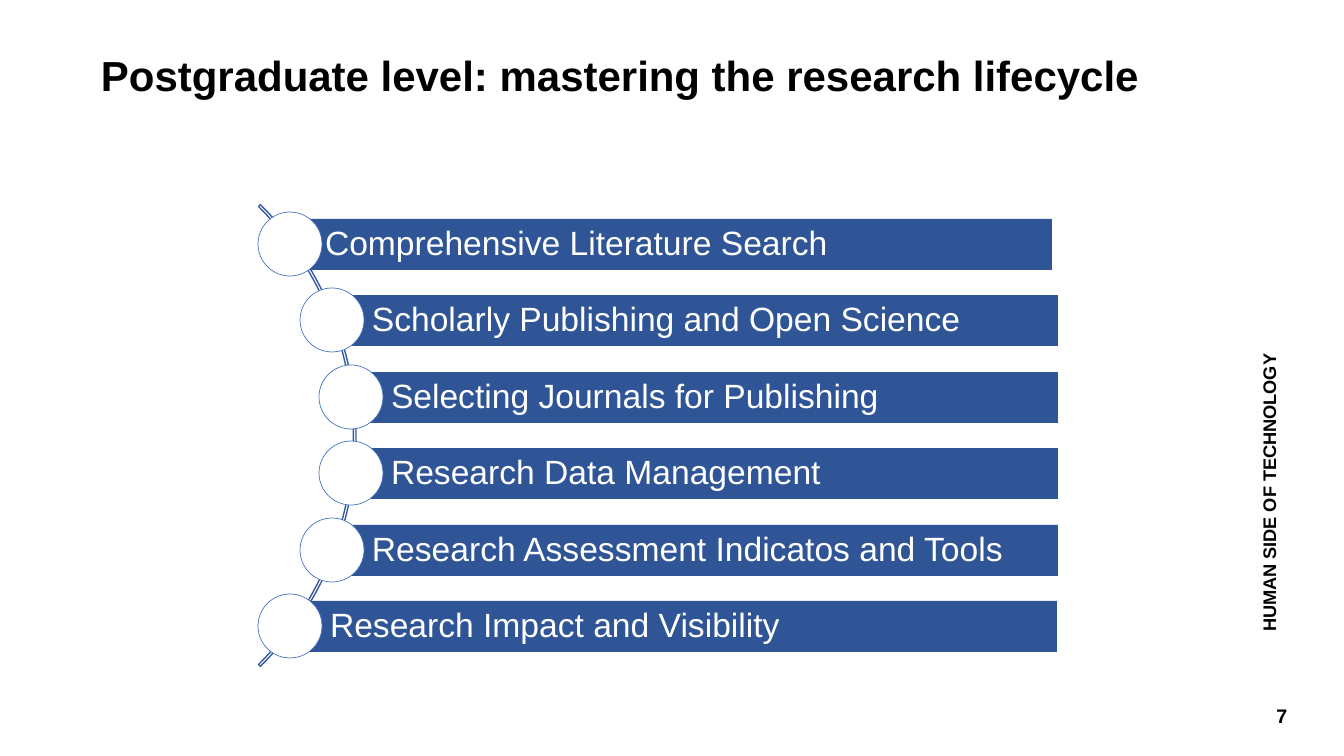
"""Build the slide on mastering the research lifecycle."""
import pptx
import pptx.util
from pptx.dml.color import RGBColor
from pptx.enum.shapes import MSO_SHAPE
from pptx.enum.text import MSO_ANCHOR, PP_ALIGN

COLORS = {"text": "000000", "white": "FFFFFF", "bar": "2F5597",
          "ring": "4472C4", "arc": "365B9D"}
TOPICS = [
    ("Comprehensive Literature Search", 258, 285, 767),
    ("Scholarly Publishing and Open Science", 300, 332, 726),
    ("Selecting Journals for Publishing", 319, 351, 707),
    ("Research Data Management", 319, 351, 707),
    ("Research Assessment Indicatos and Tools", 300, 332, 726),
    ("Research Impact and Visibility", 258, 290, 767),
]


def px(n):
    return pptx.util.Emu(round(n * 914400 / 100.8))


class SlideBuilder:
    def __init__(self, s, font="Arial"):
        self.s = s
        self.font = font

    def set_text(self, shape, text, size, color="text", bold=False, spacing=1.0,
                 align=PP_ALIGN.LEFT, anchor=MSO_ANCHOR.TOP, insets=(10, 5, 10, 5)):
        tf = shape.text_frame
        tf.word_wrap = True
        tf.vertical_anchor = anchor
        (tf.margin_left, tf.margin_top,
         tf.margin_right, tf.margin_bottom) = map(px, insets)
        p = tf.paragraphs[0]
        p.text = text
        p.alignment = align
        p.line_spacing = spacing
        p.font.name = self.font
        p.font.size = pptx.util.Pt(size)
        p.font.bold = bold
        p.font.color.rgb = RGBColor.from_string(COLORS[color])

    def text(self, box, text, size, rotation=0, **style):
        tb = self.s.shapes.add_textbox(*map(px, box))
        tb.rotation = rotation
        self.set_text(tb, text, size, **style)

    def shape(self, kind, box, fill=None, line=None, width=1):
        sp = self.s.shapes.add_shape(kind, *map(px, box))
        sp.shadow.inherit = False
        if fill:
            sp.fill.solid()
            sp.fill.fore_color.rgb = RGBColor.from_string(COLORS[fill])
        else:
            sp.fill.background()
        if line:
            sp.line.color.rgb = RGBColor.from_string(COLORS[line])
            sp.line.width = pptx.util.Pt(width)
        else:
            sp.line.fill.background()
        return sp

    def arc(self, box, adjustments):
        sp = self.shape(MSO_SHAPE.BLOCK_ARC, box, line="arc")
        for i, value in enumerate(adjustments):
            sp.adjustments[i] = value

    def topic(self, text, circle_left, bar_left, bar_width, top):
        bar = self.shape(MSO_SHAPE.RECTANGLE, (bar_left, top, bar_width, 51), "bar")
        self.set_text(bar, text, 24, color="white", spacing=0.9,
                      anchor=MSO_ANCHOR.MIDDLE, insets=(40, 7, 7, 7))
        self.shape(MSO_SHAPE.OVAL, (circle_left, top - 7, 64, 64),
                   "white", "ring", 0.5)


def main():
    prs = pptx.Presentation()
    prs.slide_width, prs.slide_height = px(1344), px(756)
    slide = SlideBuilder(prs.slides.add_slide(prs.slide_layouts[6]))
    slide.text((1231, 692, 102, 40), "7", 14, bold=True,
               align=PP_ALIGN.CENTER, anchor=MSO_ANCHOR.BOTTOM)
    slide.text((91, 50, 1093, 107),
               "Postgraduate level: mastering the research lifecycle",
               30, bold=True, spacing=0.9)
    slide.text((1023, 335, 485, 129), "HUMAN SIDE OF TECHNOLOGY", 13,
               rotation=270, bold=True, spacing=1.3, anchor=MSO_ANCHOR.MIDDLE)
    slide.arc((-297, 109, 653, 653), (189, 27, 0.004))
    for i, topic in enumerate(TOPICS):
        slide.topic(*topic, top=219 + i * 153 // 2)
    prs.save("out.pptx")


if __name__ == "__main__":
    main()
